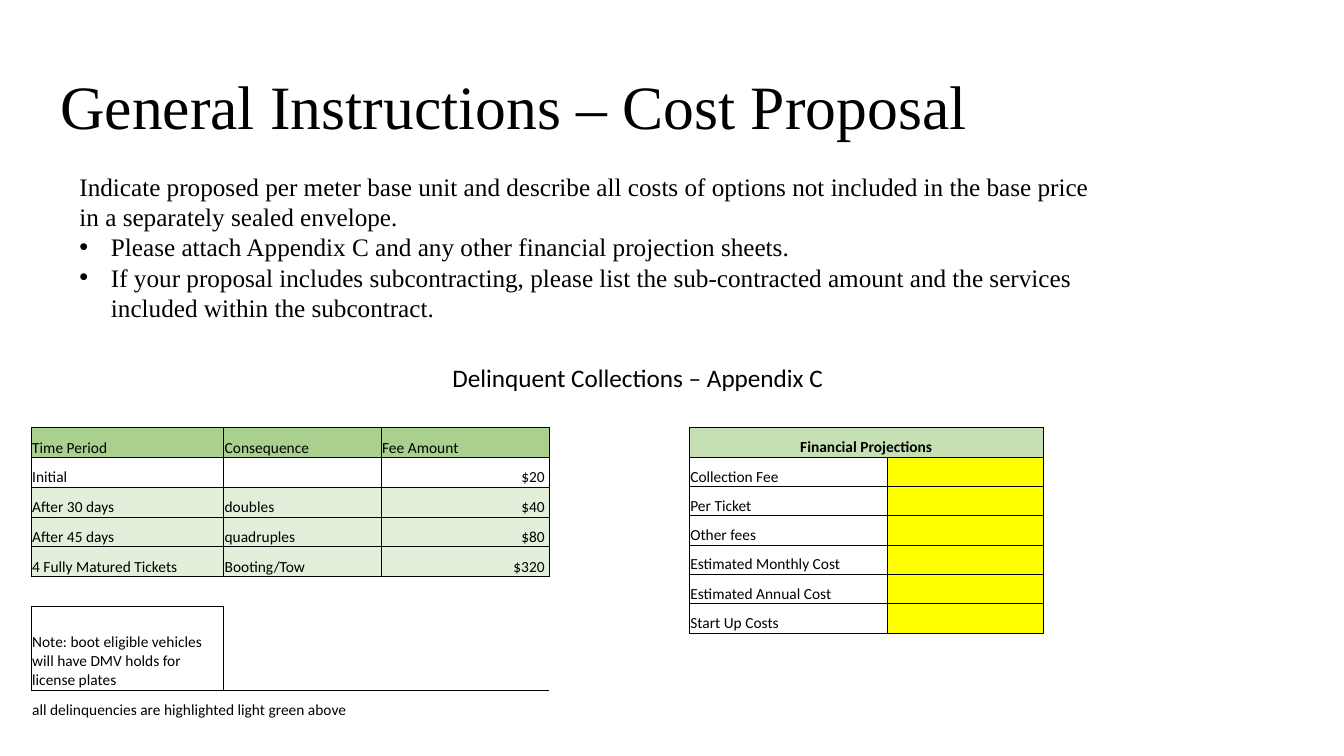
import pptx
import pptx.dml.color
import pptx.enum.text
import pptx.oxml
import pptx.oxml.ns
import pptx.util
from pptx.enum.text import MSO_ANCHOR, MSO_AUTO_SIZE, PP_ALIGN

Pt = pptx.util.Pt

SERIF, SANS = "Times New Roman", "Calibri"
BLACK, HEAD_GREEN, PALE_GREEN = "000000", "A9D08E", "E2EFDA"
PROJECTION_GREEN, YELLOW = "C6E0B4", "FFFF00"
NO_STYLE = "{2D5ABB26-0587-4C30-8999-92F81FD0307C}"

INTRO = ("Indicate proposed per meter base unit and describe all costs of options "
         "not included in the base price in a separately sealed envelope.")
BULLETS = [
    "Please attach Appendix C and any other financial projection sheets.",
    "If your proposal includes subcontracting, please list the sub-contracted "
    "amount and the services included within the subcontract.",
]
FEES = [
    ["Time Period", "Consequence", "Fee Amount"],
    ["Initial", "", "$20 "],
    ["After 30 days", "doubles", "$40 "],
    ["After 45 days", "quadruples", "$80 "],
    ["4 Fully Matured Tickets", "Booting/Tow", "$320 "],
    ["", "", ""],
    ["Note: boot eligible vehicles will have DMV holds for license plates", "", ""],
    ["all delinquencies are highlighted light green above", "", ""],
]
FEE_FILLS = [HEAD_GREEN, None] + [PALE_GREEN] * 3 + [None] * 3
PROJECTIONS = ["Collection Fee", "Per Ticket", "Other fees",
               "Estimated Monthly Cost", "Estimated Annual Cost", "Start Up Costs"]


def color(value):
    return pptx.dml.color.RGBColor.from_string(value)


def set_all(obj, values):
    for name, value in values.items():
        setattr(obj, name, value)


def add_run(p, text, size, font, bold=False):
    r = p.add_run()
    r.text = text
    set_all(r.font, {"size": Pt(size), "name": font, "bold": bold})
    r.font.color.rgb = color(BLACK)


def add_xml(parent, xml):
    parent.append(pptx.oxml.parse_xml(xml))


def set_bullet(p):
    pPr = p._p.get_or_add_pPr()
    pPr.set("marL", str(Pt(22.5)))
    pPr.set("indent", str(-Pt(22.5)))
    ns = pptx.oxml.ns.nsdecls("a")
    add_xml(pPr, f'<a:buFont {ns} typeface="Arial"/>')
    add_xml(pPr, f'<a:buChar {ns} char="•"/>')


def add_text(s, box, texts, size, font, **frame):
    """Add a text box with one paragraph per text and return its paragraphs."""
    tf = s.shapes.add_textbox(*map(Pt, box)).text_frame
    set_all(tf, {"word_wrap": True, **frame})
    for i, text in enumerate(texts):
        p = tf.add_paragraph() if i else tf.paragraphs[0]
        add_run(p, text, size, font)
    return tf.paragraphs


def add_table(s, left, top, widths, heights):
    """Add a table without any style."""
    table = s.shapes.add_table(len(heights), len(widths), Pt(left), Pt(top),
                               Pt(sum(widths)), Pt(sum(heights))).table
    set_all(table, {"first_row": False, "horz_banding": False})
    table._tbl.tblPr.find(pptx.oxml.ns.qn("a:tableStyleId")).text = NO_STYLE
    for col, width in zip(table.columns, widths):
        col.width = Pt(width)
    for row, height in zip(table.rows, heights):
        row.height = Pt(height)
    return table


def fill_cell(cell, text, fill=None, align=PP_ALIGN.LEFT, bold=False, border=True):
    set_all(cell, {"margin_left": Pt(0.7), "margin_right": Pt(0.7),
                   "margin_top": Pt(0.7), "margin_bottom": 0,
                   "vertical_anchor": MSO_ANCHOR.BOTTOM})
    p = cell.text_frame.paragraphs[0]
    p.alignment = align
    if text:
        add_run(p, text, 11, SANS, bold)
    else:
        p._p.get_or_add_endParaRPr().set("sz", "1100")
    if border:
        ns = pptx.oxml.ns.nsdecls("a")
        for side in "LRTB":
            add_xml(cell._tc.get_or_add_tcPr(),
                    f'<a:ln{side} {ns} w="{Pt(0.5)}"><a:solidFill>'
                    f'<a:srgbClr val="{BLACK}"/></a:solidFill></a:ln{side}>')
    if fill:
        cell.fill.solid()
        cell.fill.fore_color.rgb = color(fill)
    else:
        cell.fill.background()


def add_fee_table(s):
    heights = [21.3] * 6 + [59.8, 21.3]
    table = add_table(s, 22.3, 305.4, [137.5, 112.5, 120], heights)
    table.cell(7, 0).merge(table.cell(7, 2))
    for i, (row, fill) in enumerate(zip(FEES, FEE_FILLS)):
        for j, text in enumerate(row):
            align = PP_ALIGN.RIGHT if text.startswith("$") else PP_ALIGN.LEFT
            fill_cell(table.cell(i, j), text, fill, align,
                      border=i < 5 or (i, j) == (6, 0))


def add_projection_table(s):
    table = add_table(s, 492.4, 305.4, [141.3, 111.5], [20.95] * 7)
    table.cell(0, 0).merge(table.cell(0, 1))
    for j, text in enumerate(["Financial Projections", ""]):
        fill_cell(table.cell(0, j), text, PROJECTION_GREEN, PP_ALIGN.CENTER, True)
    for i, label in enumerate(PROJECTIONS, 1):
        fill_cell(table.cell(i, 0), label)
        fill_cell(table.cell(i, 1), "", YELLOW)


def main():
    prs = pptx.Presentation()
    set_all(prs, {"slide_width": Pt(960), "slide_height": Pt(540)})
    s = prs.slides.add_slide(prs.slide_layouts[6])

    title = add_text(s, (36, 26, 828, 104.4), ["General Instructions – Cost Proposal"],
                     44, SERIF, vertical_anchor=MSO_ANCHOR.MIDDLE)
    title[0].line_spacing = 0.9
    grow = MSO_AUTO_SIZE.SHAPE_TO_FIT_TEXT
    body = add_text(s, (49.7, 118.8, 748.8, 116.6), [INTRO] + BULLETS, 18, SERIF,
                    auto_size=grow)
    for p in body[1:]:
        set_bullet(p)
    add_text(s, (316.1, 255.6, 328.3, 28.8), ["Delinquent Collections – Appendix C"],
             18, SANS, auto_size=grow)
    add_fee_table(s)
    add_projection_table(s)
    prs.save("out.pptx")


if __name__ == "__main__":
    main()
